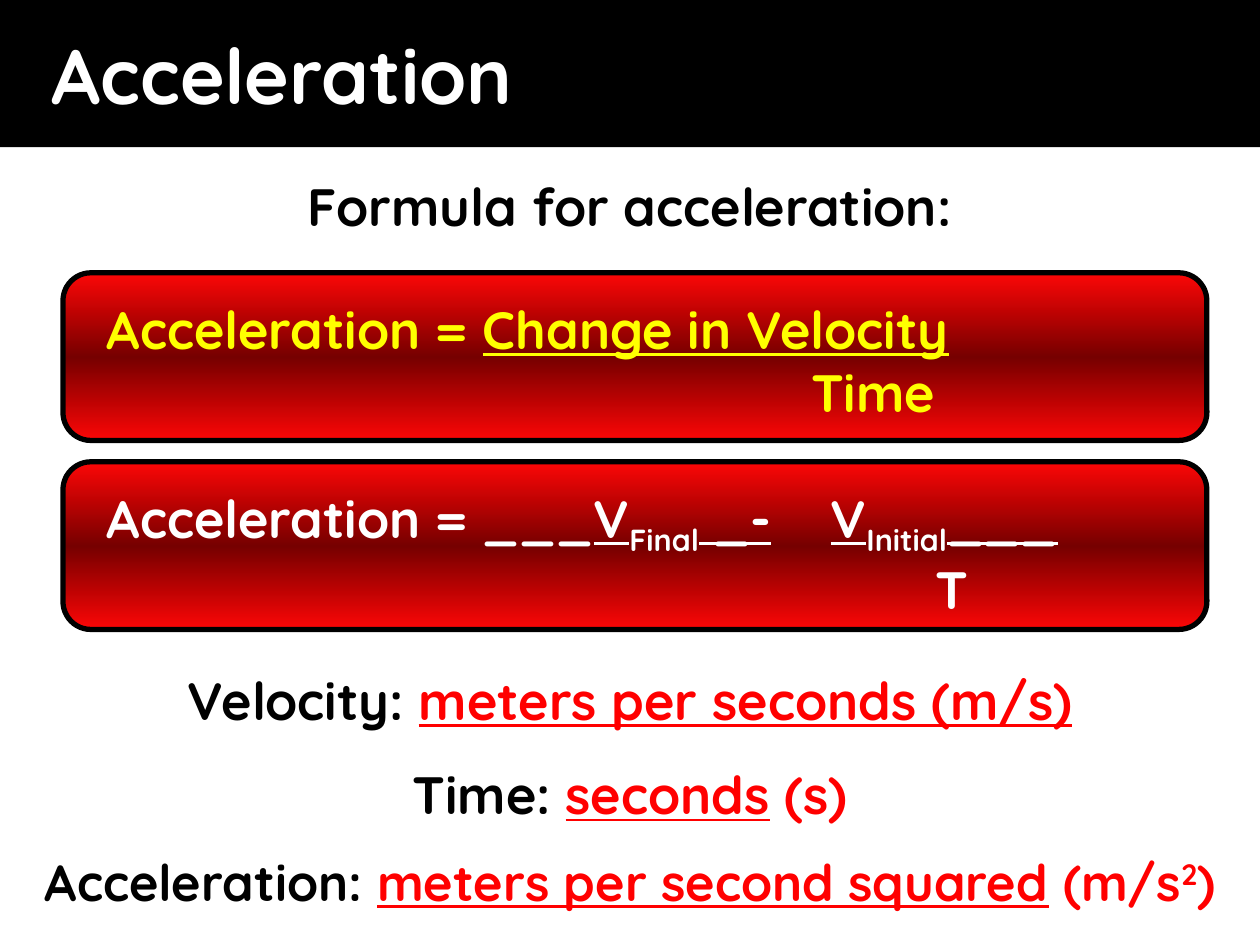
from lxml import etree
from pptx import Presentation
from pptx import util as u
from pptx.dml.color import RGBColor
from pptx.enum import shapes, text
from pptx.oxml.ns import qn

FONT = "Quicksand"
BLACK, WHITE, RED, YELLOW = "000000", "FFFFFF", "FF0000", "FFFF00"
GRADIENT = [(0, RED, 97), (50, "760000", 100), (100, RED, 97)]
SLIDE_WIDTH = 25.4
LINE_HEIGHT = 1.52


def rgb(value):
    """Turn a hex string into a colour."""
    return RGBColor.from_string(value)


def add_run(paragraph, words, color, size=30, underline=False, baseline=0):
    """Add one bold run to a paragraph."""
    run = paragraph.add_run()
    run.text = words
    font = run.font
    font.name, font.size, font.bold = FONT, u.Pt(size), True
    font.color.rgb = rgb(color)
    if underline:
        font.underline = True
    if baseline:
        run._r.get_or_add_rPr().set("baseline", str(baseline * 1000))


def add_tab_stops(paragraph, stops):
    """Give a paragraph left tab stops, in centimetres."""
    tab_list = etree.SubElement(paragraph._p.get_or_add_pPr(), qn("a:tabLst"))
    for stop in stops:
        etree.SubElement(tab_list, qn("a:tab"), pos=str(u.Cm(stop)), algn="l")


def add_text_box(parent, left, top, width, height):
    """Add a wrapping text box and return its text frame."""
    box = parent.add_textbox(u.Cm(left), u.Cm(top), u.Cm(width), u.Cm(height))
    box.text_frame.word_wrap = True
    return box.text_frame


def add_centered_line(slide, top, runs, size=30):
    """Add a centred line of text across the slide."""
    frame = add_text_box(slide.shapes, 0, top, SLIDE_WIDTH, LINE_HEIGHT)
    paragraph = frame.paragraphs[0]
    paragraph.alignment = text.PP_ALIGN.CENTER
    for words, color, *style in runs:
        add_run(paragraph, words, color, size, *style)


def add_title(slide, words):
    """Add the black title band."""
    band = slide.shapes.add_shape(
        shapes.MSO_SHAPE.RECTANGLE, 0, 0, u.Cm(SLIDE_WIDTH), u.Cm(2.97))
    band.shadow.inherit = False
    band.fill.solid()
    band.fill.fore_color.rgb = rgb(BLACK)
    band.line.fill.background()
    frame = band.text_frame
    frame.margin_left = u.Cm(1.04)
    frame.vertical_anchor = text.MSO_ANCHOR.MIDDLE
    paragraph = frame.paragraphs[0]
    paragraph.alignment = text.PP_ALIGN.LEFT
    add_run(paragraph, words, WHITE, 44)


def fill_gradient(shape):
    """Fill a shape with the vertical red gradient."""
    shape.fill.gradient()
    shape.fill.gradient_angle = 270
    stops = shape._element.spPr.find(".//" + qn("a:gsLst"))
    for stop in list(stops):
        stops.remove(stop)
    for position, color, opacity in GRADIENT:
        stop = etree.SubElement(stops, qn("a:gs"), pos=str(position * 1000))
        value = etree.SubElement(stop, qn("a:srgbClr"), val=color)
        if opacity < 100:
            etree.SubElement(value, qn("a:alpha"), val=str(opacity * 1000))


def add_formula(slide, top, color, lines):
    """Add a red panel with a fraction; each line has tab stops and runs."""
    group = slide.shapes.add_group_shape()
    panel = group.shapes.add_shape(
        shapes.MSO_SHAPE.ROUNDED_RECTANGLE,
        u.Cm(1.27), u.Cm(top), u.Cm(23.06), u.Cm(3.38))
    panel.shadow.inherit = False
    fill_gradient(panel)
    panel.line.color.rgb = rgb(BLACK)
    panel.line.width = u.Pt(3)
    frame = add_text_box(group.shapes, 1.9, top + 0.36, 21.84, 2.79)
    for index, (stops, runs) in enumerate(lines):
        paragraph = frame.add_paragraph() if index else frame.paragraphs[0]
        add_tab_stops(paragraph, stops)
        for words, *style in runs:
            add_run(paragraph, words, color, 30, *style)


def main():
    """Build and save the acceleration slide."""
    presentation = Presentation()
    presentation.slide_width = u.Cm(SLIDE_WIDTH)
    presentation.slide_height = u.Cm(19.05)
    slide = presentation.slides.add_slide(presentation.slide_layouts[6])

    add_title(slide, "Acceleration")
    add_centered_line(slide, 3.38, [("Formula for acceleration:", BLACK)])
    add_formula(slide, 5.5, YELLOW, [
        ([21.23], [("Acceleration = ",), ("Change in Velocity\t", True)]),
        ([10.34, 14.2], [("\t",), ("\t", True), ("Time",)]),
    ])
    add_formula(slide, 9.31, WHITE, [
        ([14.6, 21.29], [
            ("Acceleration = ___",), ("V", True), ("Final", False, -25),
            (" _-\tV", True), ("Initial", False, -25), ("___\t", True)]),
        ([11.07, 16.71], [("\t",), ("\t", True), ("T",)]),
    ])
    add_centered_line(slide, 13.34, [
        ("Velocity: ", BLACK), ("meters per seconds (m/s)", RED, True)])
    add_centered_line(slide, 15.24, [
        ("Time: ", BLACK), ("seconds", RED, True), (" (s)", RED)])
    add_centered_line(slide, 17.02, [
        ("Acceleration: ", BLACK), ("meters per second squared", RED, True),
        (" (m/s", RED), ("2", RED, False, 30), (")", RED)], 29)

    presentation.save("out.pptx")


if __name__ == "__main__":
    main()
